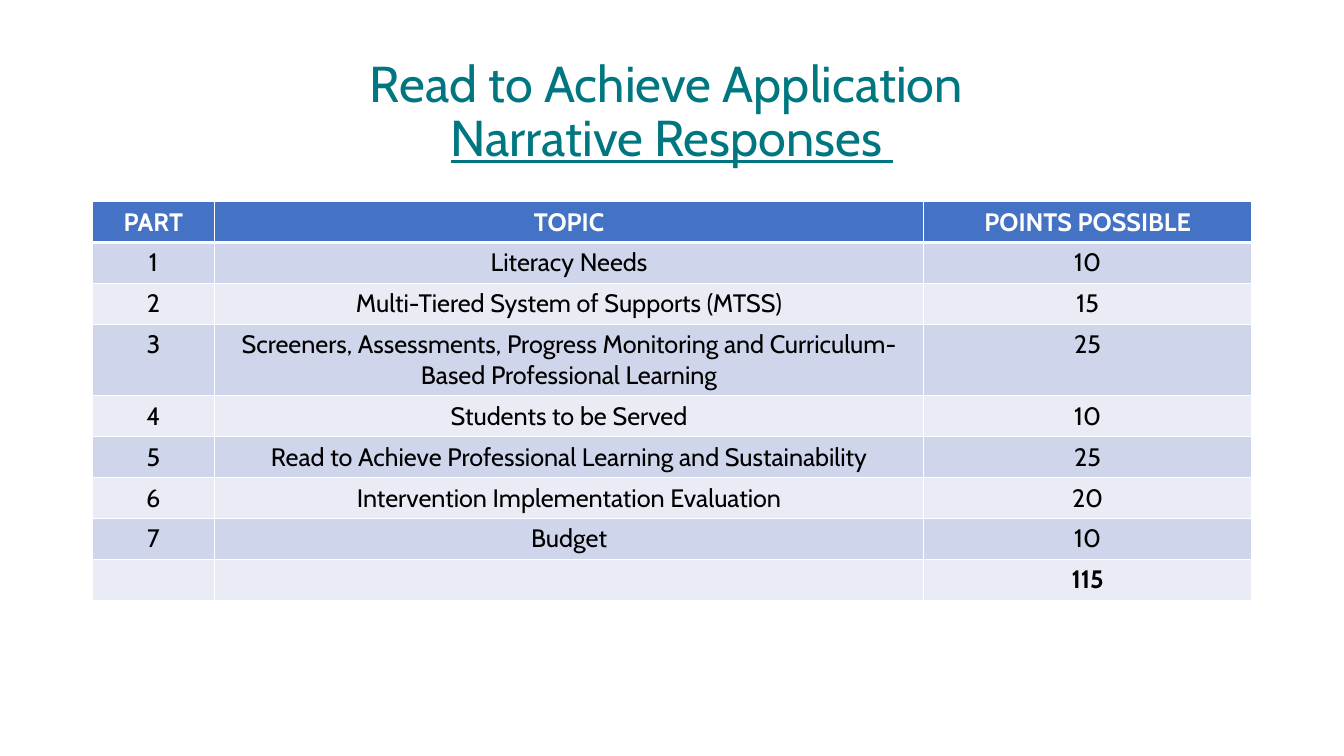
"""Build the slide that lists the narrative responses and their points."""
from lxml import etree
from pptx import Presentation
from pptx.dml.color import RGBColor
from pptx.enum import text
from pptx.oxml import ns
from pptx.util import Cm, Pt

TITLE = ("Read to Achieve Application ", "Narrative Responses ")
HEADER = ("PART", "TOPIC", "POINTS POSSIBLE")
ROWS = [
    ("1", "Literacy Needs", "10"),
    ("2", "Multi-Tiered System of Supports (MTSS)", "15"),
    ("3", "Screeners, Assessments, Progress Monitoring and "
          "Curriculum-Based Professional Learning", "25"),
    ("4", "Students to be Served", "10"),
    ("5", "Read to Achieve Professional Learning and Sustainability", "25"),
    ("6", "Intervention Implementation Evaluation", "20"),
    ("7", "Budget", "10"),
    ("", "", "115"),
]
FONT = "Cabin"
TEAL, BLUE, WHITE, BLACK = "007780", "4472C4", "FFFFFF", "000000"
BANDS = ("CFD5EA", "E9EBF5")
LEFT, WIDTH = 2.33, 29.21
COLS = (3.07, 17.88, 8.26)
ROW_H, TALL_H, TALL_ROW = 1.03, 1.8, 3


def rgb(value):
    return RGBColor.from_string(value)


def add_text(p, words, size=18, color=BLACK, bold=False, underline=False):
    p.alignment = text.PP_ALIGN.CENTER
    if words:
        r = p.add_run()
        r.text = words
        r.font.name, r.font.size = FONT, Pt(size)
        r.font.bold, r.font.underline = bold, underline
        r.font.color.rgb = rgb(color)


def set_borders(cell, top, bottom):
    tc_pr = cell._tc.get_or_add_tcPr()
    widths = (("lnL", 1), ("lnR", 1), ("lnT", top), ("lnB", bottom))
    for i, (side, width) in enumerate(widths):
        ln = etree.Element(ns.qn("a:" + side), w=str(Pt(width)))
        fill = etree.SubElement(ln, ns.qn("a:solidFill"))
        etree.SubElement(fill, ns.qn("a:srgbClr"), val=WHITE)
        tc_pr.insert(i, ln)


def add_title(s):
    sp = s.shapes.title
    sp.left, sp.top, sp.width, sp.height = Cm(LEFT), Cm(1.01), Cm(WIDTH), Cm(3.68)
    tf = sp.text_frame
    tf.auto_size = text.MSO_AUTO_SIZE.NONE
    tf.vertical_anchor = text.MSO_ANCHOR.MIDDLE
    p = tf.paragraphs[0]
    p.line_spacing = 0.9
    add_text(p, TITLE[0], size=36, color=TEAL)
    p.add_line_break()
    add_text(p, TITLE[1], size=36, color=TEAL, underline=True)


def add_points_table(s):
    rows = [HEADER, *ROWS]
    heights = [TALL_H if i == TALL_ROW else ROW_H for i in range(len(rows))]
    table = s.shapes.add_table(len(rows), len(COLS), Cm(LEFT), Cm(5.08),
                               Cm(WIDTH), Cm(sum(heights))).table
    for col, width in zip(table.columns, COLS):
        col.width = Cm(width)
    for i, values in enumerate(rows):
        table.rows[i].height = Cm(heights[i])
        header, total = i == 0, i == len(rows) - 1
        for j, value in enumerate(values):
            cell = table.cell(i, j)
            cell.fill.solid()
            cell.fill.fore_color.rgb = rgb(BLUE if header else BANDS[(i - 1) % 2])
            set_borders(cell, 3 if i == 1 else 1, 3 if header else 1)
            add_text(cell.text_frame.paragraphs[0], value,
                     color=WHITE if header else BLACK, bold=header or total)


def main():
    prs = Presentation()
    prs.slide_width, prs.slide_height = Cm(33.87), Cm(19.05)
    s = prs.slides.add_slide(prs.slide_layouts[5])
    add_title(s)
    add_points_table(s)
    prs.save("out.pptx")


if __name__ == "__main__":
    main()
